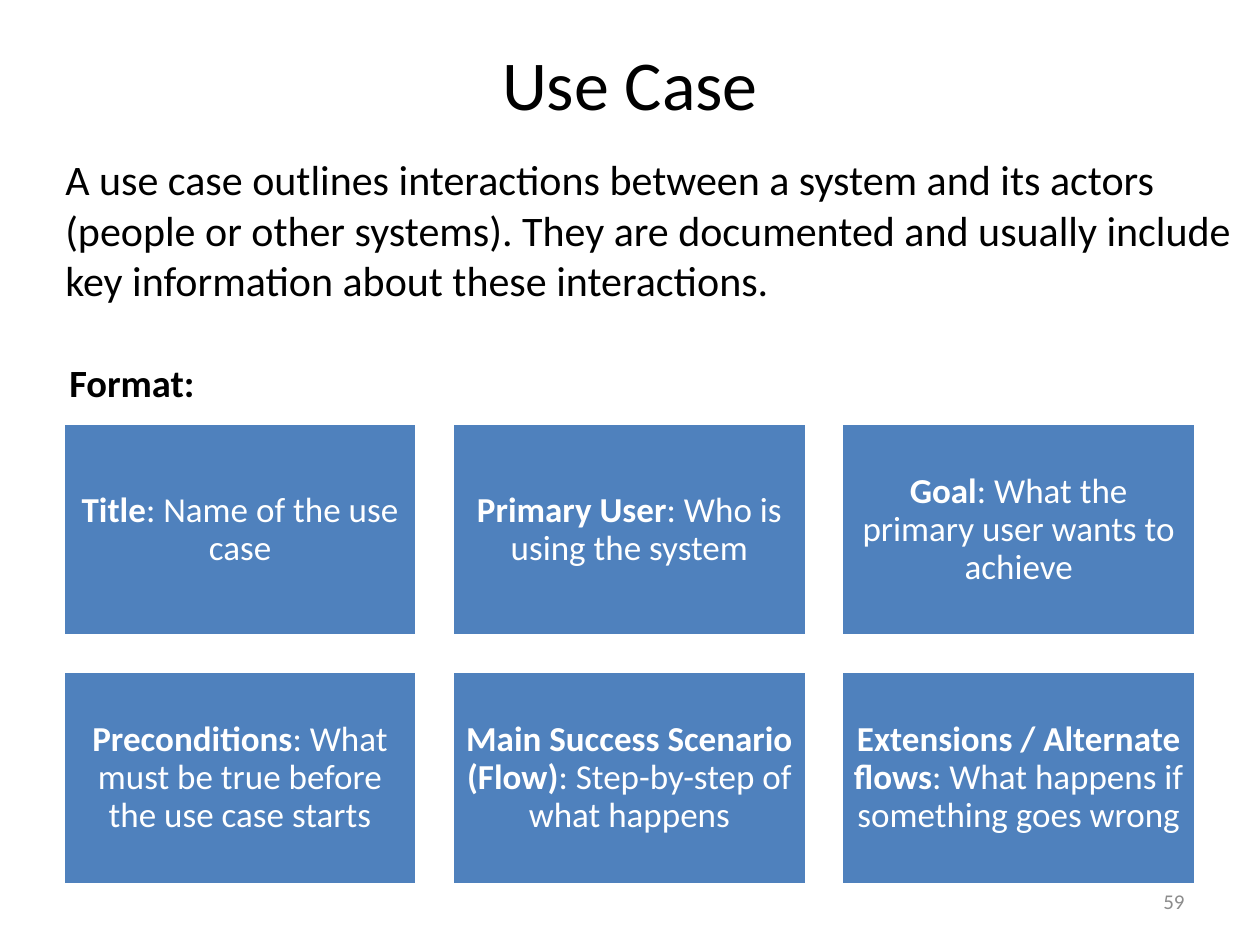
import pptx
import pptx.util
import pptx.dml.color
import pptx.enum.shapes
import pptx.enum.text
from pptx.util import Inches, Pt

ALIGN = pptx.enum.text.PP_ALIGN
ANCHOR = pptx.enum.text.MSO_ANCHOR

TITLE = "Use Case"
INTRO = ("A use case outlines interactions between a system and its actors "
         "(people or other systems). They are documented and usually include "
         "key information about these interactions.")
FORMAT_LABEL = "Format:"
PAGE = "59"
PARTS = [
    ("Title", "Name of the use case"),
    ("Primary User", "Who is using the system"),
    ("Goal", "What the primary user wants to achieve"),
    ("Preconditions", "What must be true before the use case starts"),
    ("Main Success Scenario (Flow)", "Step-by-step of what happens"),
    ("Extensions / Alternate flows", "What happens if something goes wrong"),
]
COLUMNS = 3
LEFT, TOP = 0.5, 3.36
CARD_W, CARD_H, GAP = 2.81, 1.69, 0.28


def rgb(value):
    return pptx.dml.color.RGBColor.from_string(value)


def style(p, size, color="000000", bold=None, align=ALIGN.LEFT):
    p.alignment = align
    p.font.name = "Calibri"
    p.font.size = Pt(size)
    p.font.color.rgb = rgb(color)
    p.font.bold = bold


def set_margins(tf, inches):
    tf.margin_left = tf.margin_right = Inches(inches)
    tf.margin_top = tf.margin_bottom = Inches(inches)


def add_text(s, box, text, size, anchor=ANCHOR.TOP, **look):
    tf = s.shapes.add_textbox(*map(Inches, box)).text_frame
    tf.word_wrap = True
    tf.vertical_anchor = anchor
    tf.text = text
    style(tf.paragraphs[0], size, **look)
    return tf


def add_card(s, x, y, name, meaning):
    sp = s.shapes.add_shape(pptx.enum.shapes.MSO_SHAPE.RECTANGLE,
                            Inches(x), Inches(y), Inches(CARD_W), Inches(CARD_H))
    sp.shadow.inherit = False
    sp.fill.solid()
    sp.fill.fore_color.rgb = rgb("4F81BD")
    sp.line.color.rgb = rgb("FFFFFF")
    sp.line.width = Pt(2)
    tf = sp.text_frame
    tf.word_wrap = True
    tf.vertical_anchor = ANCHOR.MIDDLE
    set_margins(tf, 0.08)
    p = tf.paragraphs[0]
    style(p, 20, "FFFFFF", align=ALIGN.CENTER)
    p.line_spacing = 0.9
    r = p.add_run()
    r.text = name
    r.font.bold = True
    p.add_run().text = f": {meaning}"


def main():
    prs = pptx.Presentation()
    prs.slide_width, prs.slide_height = Inches(10), Inches(7.5)
    s = prs.slides.add_slide(prs.slide_layouts[5])

    title = s.shapes.title
    title.left, title.top = Inches(0.5), Inches(0.03)
    title.width, title.height = Inches(9), Inches(1.25)
    title.text_frame.text = TITLE
    title.text_frame.vertical_anchor = ANCHOR.MIDDLE
    style(title.text_frame.paragraphs[0], 40, align=ALIGN.CENTER)

    add_text(s, (0.42, 1.17, 9.5, 1.31), INTRO, 24)
    tf = add_text(s, (0.46, 2.8, 5.27, 0.27), FORMAT_LABEL, 22, bold=True)
    set_margins(tf, 0.09)
    tf.paragraphs[0].line_spacing = 0.9

    for i, (name, meaning) in enumerate(PARTS):
        row, col = divmod(i, COLUMNS)
        add_card(s, LEFT + col * (CARD_W + GAP), TOP + row * (CARD_H + GAP),
                 name, meaning)

    add_text(s, (7.17, 6.95, 2.33, 0.4), PAGE, 12, ANCHOR.MIDDLE,
             color="8C8C8C", align=ALIGN.RIGHT)
    prs.save("out.pptx")


if __name__ == "__main__":
    main()
